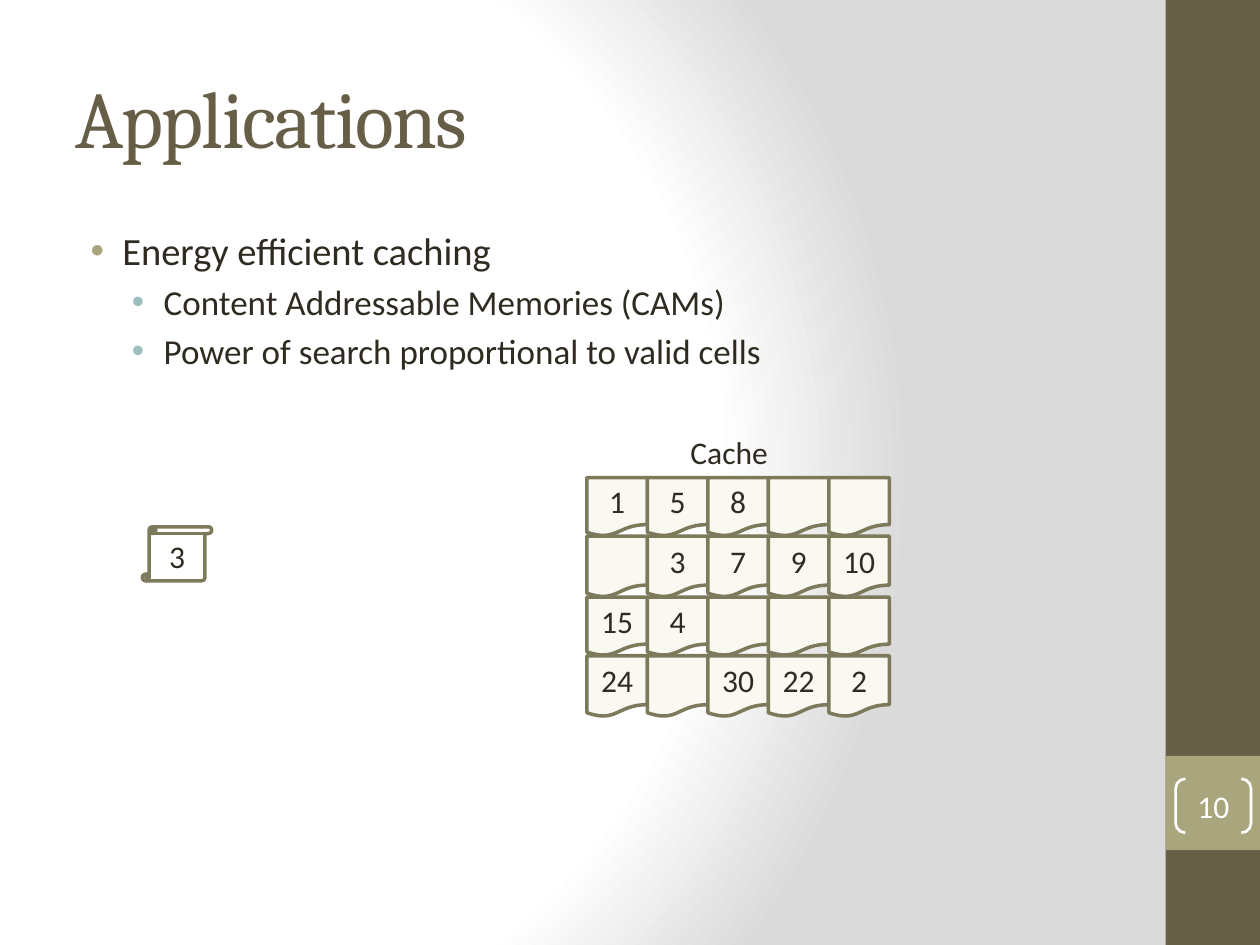
from itertools import accumulate

from pptx import Presentation
from pptx.dml.color import RGBColor
from pptx.enum.shapes import MSO_SHAPE
from pptx.enum.text import MSO_ANCHOR, PP_ALIGN
from pptx.oxml import parse_xml
from pptx.oxml.ns import nsdecls
from pptx.util import Cm, Pt

BROWN, OLIVE, TEAL = "675E47", "A9A57C", "9CBEBD"
INK, OUTLINE, CREAM, WHITE = "2F2B20", "7D7A5C", "F9F8F1", "FFFFFF"

CACHE_ROWS = [
    ["1", "5", "8", "", ""],
    ["", "3", "7", "9", "10"],
    ["15", "4", "", "", ""],
    ["24", "", "30", "22", "2"],
]
ROW_HEIGHTS = [1.18, 1.23, 1.18, 1.23]
CELL_WIDTH = 1.22
CACHE_LEFT, CACHE_TOP = 11.83, 9.63

# text, size, left edge of the text in cm, bullet colour
BULLETS = [
    ("Energy efficient caching", 22, 0.95, OLIVE),
    ("Content Addressable Memories (CAMs)", 20, 1.78, TEAL),
    ("Power of search proportional to valid cells", 20, 1.78, TEAL),
]
BULLET_HANG = 0.64


def color(value):
    return RGBColor.from_string(value)


def set_background(slide):
    """Fill the slide with a circular gradient from white to grey."""
    stops = "".join(
        f'<a:gs pos="{position * 1000}"><a:srgbClr val="{value}"/></a:gs>'
        for position, value in [(0, WHITE), (75, WHITE), (100, "DADADA")]
    )
    background = parse_xml(
        f'<p:bg {nsdecls("p", "a")}><p:bgPr><a:gradFill rotWithShape="1">'
        f'<a:gsLst>{stops}</a:gsLst><a:path path="circle">'
        '<a:fillToRect l="20000" t="50000" r="100000" b="50000"/></a:path>'
        "</a:gradFill><a:effectLst/></p:bgPr></p:bg>"
    )
    slide.element.cSld.insert(0, background)


def write_text(paragraph, text, size=18, font="Calibri", fill=INK,
               align=PP_ALIGN.LEFT, spacing=None):
    paragraph.alignment = align
    run = paragraph.add_run()
    run.text = text
    run.font.size = Pt(size)
    run.font.name = font
    run.font.color.rgb = color(fill)
    if spacing is not None:
        run.font._element.set("spc", str(spacing * 100))


def add_text_box(slide, left, top, width, height, wrap=True,
                 anchor=MSO_ANCHOR.TOP):
    frame = slide.shapes.add_textbox(
        Cm(left), Cm(top), Cm(width), Cm(height)).text_frame
    frame.word_wrap = wrap
    frame.vertical_anchor = anchor
    return frame


def add_box(slide, kind, left, top, width, height, fill=None, line=None,
            line_width=2, text="", text_color=INK):
    shape = slide.shapes.add_shape(
        kind, Cm(left), Cm(top), Cm(width), Cm(height))
    shape.shadow.inherit = False
    if fill:
        shape.fill.solid()
        shape.fill.fore_color.rgb = color(fill)
    else:
        shape.fill.background()
    if line:
        shape.line.color.rgb = color(line)
        shape.line.width = Pt(line_width)
    else:
        shape.line.fill.background()
    if text:
        frame = shape.text_frame
        frame.margin_left = frame.margin_right = 0
        frame.margin_top = frame.margin_bottom = 0
        frame.vertical_anchor = MSO_ANCHOR.MIDDLE
        write_text(frame.paragraphs[0], text, fill=text_color,
                   align=PP_ALIGN.CENTER)
    return shape


def set_bullet(paragraph, indent, bullet_color):
    properties = paragraph._p.get_or_add_pPr()
    properties.set("marL", str(Cm(indent)))
    properties.set("indent", str(-Cm(BULLET_HANG)))
    for xml in (
        f'<a:buClr {nsdecls("a")}><a:srgbClr val="{bullet_color}"/></a:buClr>',
        f'<a:buFont {nsdecls("a")} typeface="Arial"/>',
        f'<a:buChar {nsdecls("a")} char="•"/>',
    ):
        properties.append(parse_xml(xml))


def add_bullets(slide):
    frame = add_text_box(slide, 1.27, 4.45, 21.17, 13.33)
    for index, (text, size, indent, bullet_color) in enumerate(BULLETS):
        paragraph = frame.add_paragraph() if index else frame.paragraphs[0]
        write_text(paragraph, text, size=size)
        paragraph.space_before = Pt(size * 0.2)
        set_bullet(paragraph, indent, bullet_color)


def add_cache(slide):
    tops = accumulate(ROW_HEIGHTS, initial=CACHE_TOP)
    for values, top, height in zip(CACHE_ROWS, tops, ROW_HEIGHTS):
        for column, value in enumerate(values):
            add_box(slide, MSO_SHAPE.FLOWCHART_DOCUMENT,
                    CACHE_LEFT + column * CELL_WIDTH, top, CELL_WIDTH, height,
                    fill=CREAM, line=OUTLINE, text=value)
    label = add_text_box(slide, 13.67, 8.61, 2.08, 1.02, wrap=False)
    write_text(label.paragraphs[0], "Cache")


def add_side_band(slide):
    add_box(slide, MSO_SHAPE.RECTANGLE, 23.5, 0, 1.9, 19.05, fill=BROWN)
    add_box(slide, MSO_SHAPE.RECTANGLE, 23.5, 15.24, 1.9, 1.9, fill=OLIVE)


def add_slide_number(slide):
    brackets = add_box(slide, MSO_SHAPE.DOUBLE_BRACKET, 23.7, 15.7, 1.52, 1.09,
                       line=WHITE, line_width=1.5, text="10",
                       text_color=WHITE)
    brackets.adjustments[0] = 0.18


def main():
    presentation = Presentation()
    presentation.slide_width = Cm(25.4)
    presentation.slide_height = Cm(19.05)
    slide = presentation.slides.add_slide(presentation.slide_layouts[6])

    set_background(slide)
    add_side_band(slide)
    title = add_text_box(slide, 1.27, 0.76, 21.17, 3.18,
                         anchor=MSO_ANCHOR.MIDDLE)
    write_text(title.paragraphs[0], "Applications", size=46, font="Cambria",
               fill=BROWN, spacing=-1)
    add_bullets(slide)
    add_cache(slide)
    add_box(slide, MSO_SHAPE.VERTICAL_SCROLL, 2.87, 10.62, 1.4, 1.09,
            line=OUTLINE, text="3")
    add_slide_number(slide)
    presentation.save("out.pptx")


if __name__ == "__main__":
    main()
